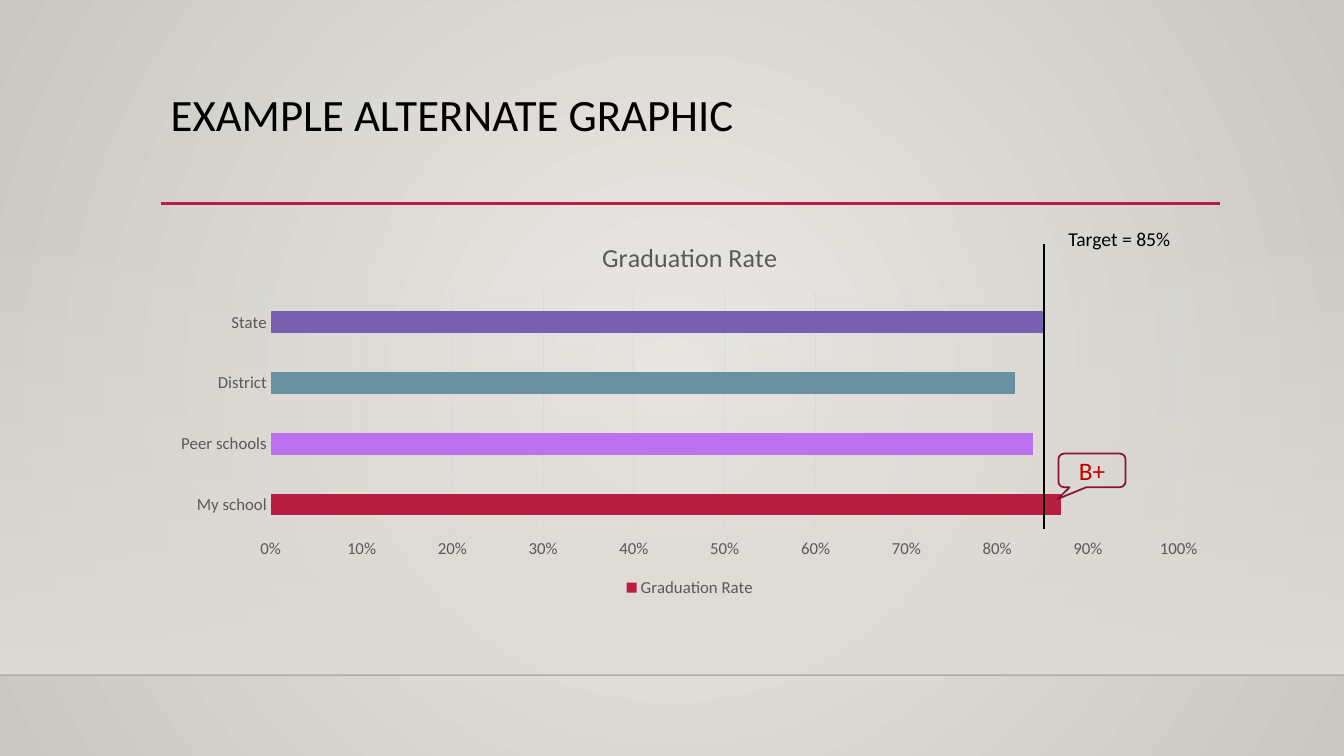
from dataclasses import dataclass

from lxml.etree import SubElement
from pptx import Presentation
from pptx.chart.data import CategoryChartData
from pptx.dml.color import RGBColor
from pptx.enum.chart import XL_CHART_TYPE as ChartType
from pptx.enum.chart import XL_LEGEND_POSITION as LegendPosition
from pptx.enum.chart import XL_TICK_MARK as TickMark
from pptx.enum.shapes import MSO_CONNECTOR as Connector
from pptx.enum.shapes import MSO_SHAPE as Shape
from pptx.enum.text import MSO_ANCHOR as Anchor
from pptx.enum.text import PP_ALIGN as Align
from pptx.oxml import parse_xml
from pptx.oxml.ns import nsdecls, qn
from pptx.util import Emu, Pt

FONT = "Calibri"
CRIMSON, GREY, PALE, BLACK = "B71E42", "595959", "D9D9D9", "000000"
PAGE_WIDTH, PAGE_HEIGHT = 1280, 720
LEFT, CONTENT_WIDTH = 153, 1008
FLOOR = 643
TITLE_ONLY = 5


@dataclass
class Rule:
    start: tuple[int, int]
    end: tuple[int, int]
    colour: str
    weight: float
    opacity: int = 100


@dataclass
class Bar:
    name: str
    rate: float
    colour: str


RULES = [
    Rule((0, FLOOR), (PAGE_WIDTH, FLOOR), "000001", 1, opacity=20),
    Rule((LEFT, 194), (1162, 194), CRIMSON, 2.5),
]
TARGET_RULE = Rule((994, 504), (994, 232), BLACK, 1.25)
BARS = [
    Bar("My school", 0.87, CRIMSON),
    Bar("Peer schools", 0.84, "BC72F0"),
    Bar("District", 0.82, "6892A0"),
    Bar("State", 0.85, "795FAF"),
]
PLOT_AREA = {"x": 0.104, "y": 0.185, "w": 0.858, "h": 0.64}


def px(length: int) -> Emu:
    return Emu(length * 9525)


def box(left: int, top: int, width: int, height: int) -> tuple[Emu, ...]:
    return px(left), px(top), px(width), px(height)


def rgb(colour: str) -> RGBColor:
    return RGBColor.from_string(colour)


def set_font(font, size: float, colour: str) -> None:
    font.name, font.size, font.bold = FONT, Pt(size), False
    font.color.rgb = rgb(colour)


def set_line(line, colour: str, weight: float) -> None:
    line.color.rgb = rgb(colour)
    line.width = Pt(weight)


def set_alpha(colour_holder, opacity: int) -> None:
    """Make the first plain colour below an XML element translucent."""
    colour = next(colour_holder.iter(qn("a:srgbClr")))
    SubElement(colour, qn("a:alpha"), val=str(opacity * 1000))


def write(frame, text: str, *, size: float, colour: str, align=Align.LEFT,
          anchor=Anchor.TOP, spacing: float = 1.0) -> None:
    frame.word_wrap = True
    frame.vertical_anchor = anchor
    para = frame.paragraphs[0]
    para.alignment, para.line_spacing = align, spacing
    span = para.add_run()
    span.text = text
    set_font(span.font, size, colour)


def set_gradient(fill, first: str, last: str) -> None:
    fill.gradient()
    for stop, colour, position in zip(fill.gradient_stops, (first, last), (0, 1)):
        stop.color.rgb = rgb(colour)
        stop.position = position


def draw_background(page) -> None:
    set_gradient(page.background.fill, "ECEAE7", "CAC7C1")
    gradient = next(page.element.iter(qn("a:gradFill")))
    gradient.replace(gradient.find(qn("a:lin")), parse_xml(
        f'<a:path {nsdecls("a")} path="circle">'
        '<a:fillToRect l="50000" t="50000" r="50000" b="50000"/></a:path>'))

    wall = page.shapes.add_shape(Shape.RECTANGLE, *box(0, 212, PAGE_WIDTH, FLOOR - 212))
    wall.shadow.inherit = False
    wall.line.fill.background()
    set_gradient(wall.fill, "DFDBD5", "DFDBD5")
    wall.fill.gradient_angle = 270
    set_alpha(next(wall.element.iter(qn("a:gs"))), 0)


def draw_rule(page, rule: Rule) -> None:
    line = page.shapes.add_connector(
        Connector.STRAIGHT, *map(px, rule.start), *map(px, rule.end))
    set_line(line.line, rule.colour, rule.weight)
    if rule.opacity < 100:
        set_alpha(line.element.spPr, rule.opacity)
    SubElement(line.element.spPr, qn("a:effectLst"))


def place_plot(chart) -> None:
    """Fix the inner plot area as fractions of the chart."""
    area = next(chart.element.iter(qn("c:plotArea")))
    for layout in area.findall(qn("c:layout")):
        area.remove(layout)
    modes = '<c:xMode val="edge"/><c:yMode val="edge"/>'
    sizes = "".join(f'<c:{key} val="{part}"/>' for key, part in PLOT_AREA.items())
    area.insert(0, parse_xml(
        f'<c:layout {nsdecls("c")}><c:manualLayout><c:layoutTarget val="inner"/>'
        f'{modes}{sizes}</c:manualLayout></c:layout>'))


def draw_chart(page) -> None:
    data = CategoryChartData(number_format="0%")
    data.categories = [bar.name for bar in BARS]
    data.add_series("Graduation Rate", [bar.rate for bar in BARS])
    chart = page.shapes.add_chart(
        ChartType.BAR_CLUSTERED, *box(LEFT, 211, CONTENT_WIDTH, 362), data).chart
    set_font(chart.font, 10, BLACK)
    place_plot(chart)

    chart.has_title = True
    write(chart.chart_title.text_frame, "Graduation Rate", size=18.6, colour=GREY,
          align=Align.CENTER)
    chart.chart_title.include_in_layout = False
    chart.has_legend = True
    chart.legend.position = LegendPosition.BOTTOM
    chart.legend.include_in_layout = False
    set_font(chart.legend.font, 12, GREY)

    for axis in (chart.category_axis, chart.value_axis):
        axis.major_tick_mark = axis.minor_tick_mark = TickMark.NONE
        set_font(axis.tick_labels.font, 12, GREY)
    set_line(chart.category_axis.format.line, PALE, 0.75)
    rates = chart.value_axis
    rates.minimum_scale, rates.maximum_scale, rates.major_unit = 0, 1, 0.1
    rates.format.line.fill.background()
    rates.has_major_gridlines = True
    set_line(rates.major_gridlines.format.line, PALE, 0.75)
    rates.tick_labels.number_format = "0%"
    rates.tick_labels.number_format_is_linked = False

    plot = chart.plots[0]
    plot.gap_width, plot.vary_by_categories = 182, False
    series = plot.series[0]
    for fill, colour in [(series.format.fill, CRIMSON)] + [
            (series.points[index].format.fill, bar.colour)
            for index, bar in enumerate(BARS) if bar.colour != CRIMSON]:
        fill.solid()
        fill.fore_color.rgb = rgb(colour)


def draw_grade(page) -> None:
    callout = page.shapes.add_shape(
        Shape.ROUNDED_RECTANGULAR_CALLOUT, *box(1008, 432, 64, 32))
    for index, value in enumerate((-0.51, 0.85, 0.17)):
        callout.adjustments[index] = value
    callout.shadow.inherit = False
    callout.fill.background()
    set_line(callout.line, "871631", 1.25)
    write(callout.text_frame, "B+", size=18, colour="C00000",
          align=Align.CENTER, anchor=Anchor.MIDDLE)


def main() -> None:
    deck = Presentation()
    deck.slide_width, deck.slide_height = px(PAGE_WIDTH), px(PAGE_HEIGHT)
    page = deck.slides.add_slide(deck.slide_layouts[TITLE_ONLY])
    draw_background(page)
    for rule in RULES:
        draw_rule(page, rule)

    title = page.shapes.title
    title.left, title.top, title.width, title.height = box(LEFT, 84, CONTENT_WIDTH, 110)
    write(title.text_frame, "EXAMPLE ALTERNATE GRAPHIC", size=32, colour=BLACK,
          spacing=0.9)

    draw_chart(page)
    draw_rule(page, TARGET_RULE)
    target = page.shapes.add_textbox(*box(1008, 211, 153, 32))
    write(target.text_frame, "Target = 85%", size=14, colour=BLACK)
    draw_grade(page)
    deck.save("out.pptx")


if __name__ == "__main__":
    main()
